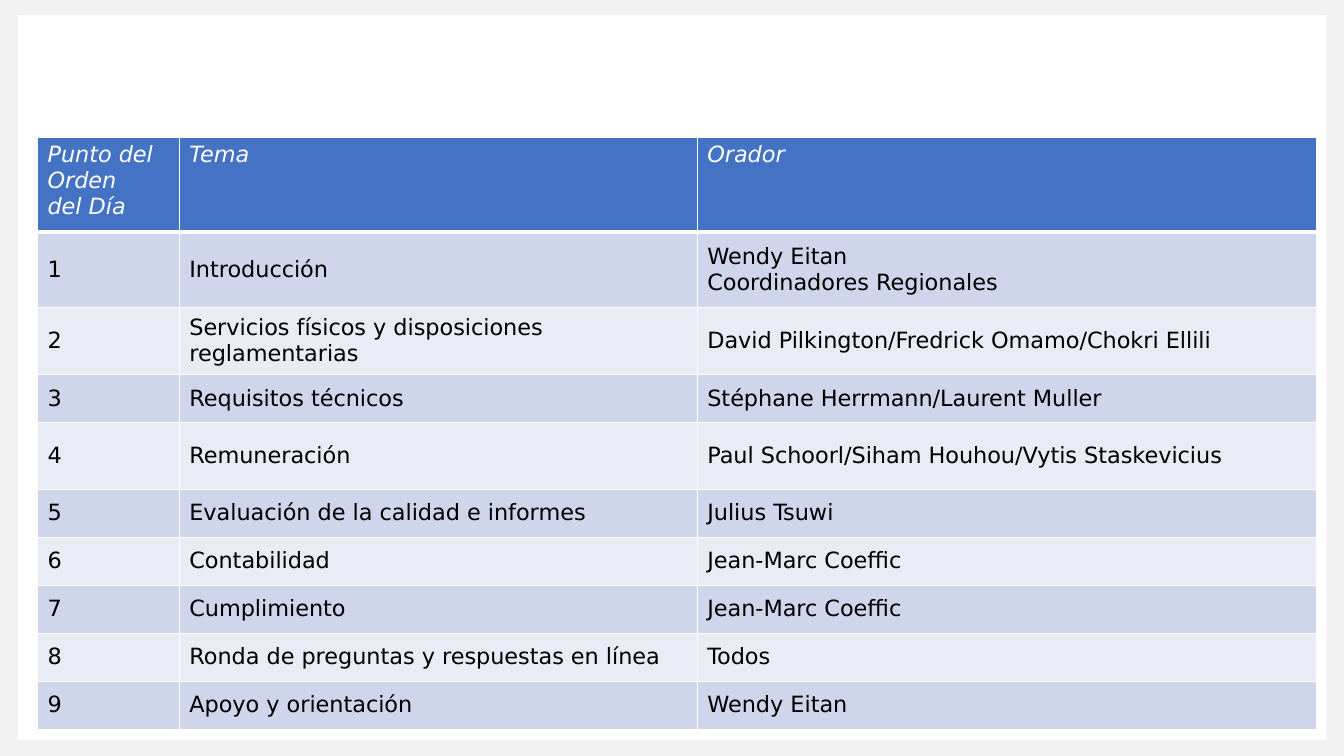
from lxml import etree
from pptx import Presentation
from pptx.dml.color import RGBColor
from pptx.enum.shapes import MSO_SHAPE
from pptx.enum.text import MSO_ANCHOR
from pptx.oxml.ns import qn
from pptx.util import Pt

RECT = MSO_SHAPE.RECTANGLE
TOP = MSO_ANCHOR.TOP
MIDDLE = MSO_ANCHOR.MIDDLE
FONT = "DejaVu Sans"
WHITE = "FFFFFF"


def paint(fill, color):
    fill.solid()
    fill.fore_color.rgb = RGBColor.from_string(color)


def border(cell, side, width):
    line = etree.SubElement(cell._tc.get_or_add_tcPr(), qn("a:" + side), w=str(Pt(width)))
    solid = etree.SubElement(line, qn("a:solidFill"))
    etree.SubElement(solid, qn("a:srgbClr"), val=WHITE)


agenda = [
    ("Punto del Orden \ndel Día", "Tema", "Orador"),
    ("1", "Introducción", "Wendy Eitan\nCoordinadores Regionales"),
    ("2", "Servicios físicos y disposiciones reglamentarias",
     "David Pilkington/Fredrick Omamo/Chokri Ellili"),
    ("3", "Requisitos técnicos", "Stéphane Herrmann/Laurent Muller"),
    ("4", "Remuneración", "Paul Schoorl/Siham Houhou/Vytis Staskevicius"),
    ("5", "Evaluación de la calidad e informes", "Julius Tsuwi"),
    ("6", "Contabilidad", "Jean-Marc Coeffic"),
    ("7", "Cumplimiento", "Jean-Marc Coeffic"),
    ("8", "Ronda de preguntas y respuestas en línea", "Todos"),
    ("9", "Apoyo y orientación", "Wendy Eitan"),
]
widths = [101.3, 370, 442.2]
heights = [68, 54, 47.6, 34.3, 47.6] + [34.3] * 5

deck = Presentation()
deck.slide_width = Pt(960)
deck.slide_height = Pt(540)
slide = deck.slides.add_slide(deck.slide_layouts[6])

for left, top, width, height, color in [
    (0, 0, 960, 540, "F2F2F2"),
    (12.9, 10.7, 934.4, 517.8, WHITE),
]:
    panel = slide.shapes.add_shape(RECT, Pt(left), Pt(top), Pt(width), Pt(height))
    panel.shadow.inherit = False
    paint(panel.fill, color)
    panel.line.fill.background()

frame = slide.shapes.add_table(
    len(agenda), len(widths), Pt(26.8), Pt(97.9), Pt(sum(widths)), Pt(sum(heights)))
table = frame.table
for column, width in zip(table.columns, widths):
    column.width = Pt(width)
for row, height in zip(table.rows, heights):
    row.height = Pt(height)

for i, entry in enumerate(agenda):
    head = i == 0
    color = "4472C4" if head else ("E9EBF5", "CFD5EA")[i % 2]
    for j, text in enumerate(entry):
        cell = table.cell(i, j)
        cell.vertical_anchor = TOP if head else MIDDLE
        for side in ("lnL", "lnR", "lnT", "lnB"):
            thick = (head and side == "lnB") or (i == 1 and side == "lnT")
            border(cell, side, 3 if thick else 1)
        paint(cell.fill, color)
        para = cell.text_frame.paragraphs[0]
        for k, line in enumerate(text.split("\n")):
            if k and head:
                para.add_line_break()
            elif k:
                para = cell.text_frame.add_paragraph()
            run = para.add_run()
            run.text = line
            run.font.name = FONT
            run.font.size = Pt(16)
            run.font.bold = False
            run.font.italic = head
            paint(run.font.fill, WHITE if head else "000000")

deck.save("out.pptx")
